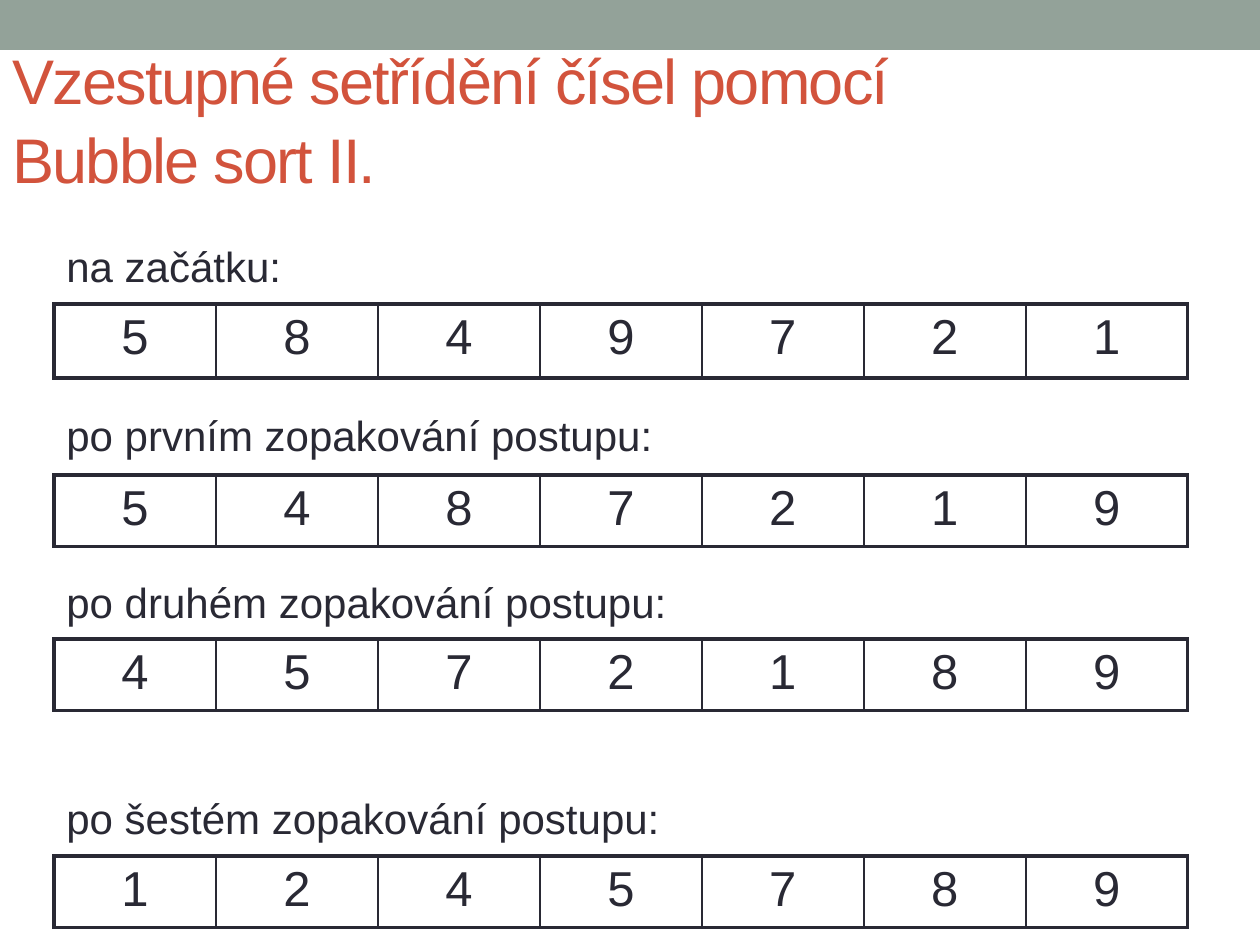
"""Build the slide that shows the passes of an ascending bubble sort."""
from lxml.etree import SubElement
from pptx import Presentation
from pptx.dml.color import RGBColor
from pptx.enum.shapes import MSO_SHAPE
from pptx.enum.text import MSO_ANCHOR, MSO_AUTO_SIZE, PP_ALIGN
from pptx.oxml.ns import qn
from pptx.util import Pt

SCALE = 914400 / 126
HUES = {"band": "93A299", "title": "D2533C", "ink": "292934"}
LEFT, STEP = 54, 162


def px(*sizes):
    return [round(size * SCALE) for size in sizes]


def write(para, text, size, hue):
    run = para.add_run()
    run.text = text
    run.font.name = "Arial"
    run.font.size = Pt(size)
    run.font.color.rgb = RGBColor.from_string(HUES[hue])
    return run


deck = Presentation()
deck.slide_width, deck.slide_height = px(1260, 945)
slide = deck.slides.add_slide(deck.slide_layouts[6])
shapes = slide.shapes

band = shapes.add_shape(MSO_SHAPE.RECTANGLE, *px(0, 0, 1260, 50))
band.shadow.inherit = False
band.fill.solid()
band.fill.fore_color.rgb = RGBColor.from_string(HUES["band"])
band.line.fill.background()

title = shapes.add_textbox(*px(0, 38, 1211, 158)).text_frame
title.word_wrap = True
title.vertical_anchor = MSO_ANCHOR.MIDDLE
para = title.paragraphs[0]
para.line_spacing = 1.05
for part, text in enumerate(["Vzestupné setřídění čísel pomocí", "Bubble sort II."]):
    if part:
        para.add_line_break()
    run = write(para, text, 36, "title")
    run.font._element.set("spc", "-100")

stages = [
    ("na začátku:", 234, 318, 304, 74, "5849721"),
    ("po prvním zopakování postupu:", 403, 615, 475, 70, "5487219"),
    ("po druhém zopakování postupu:", 570, 635, 639, 70, "4572189"),
    ("po šestém zopakování postupu:", 786, 635, 856, 70, "1245789"),
]
for label, top, width, row, high, digits in stages:
    frame = shapes.add_textbox(*px(LEFT, top, width, 63)).text_frame
    frame.word_wrap = True
    frame.auto_size = MSO_AUTO_SIZE.SHAPE_TO_FIT_TEXT
    write(frame.paragraphs[0], label, 24, "ink")

    count = len(digits)
    table = shapes.add_table(1, count, *px(LEFT, row, STEP * count, high)).table
    table.first_row = table.horz_banding = False
    for col, digit in enumerate(digits):
        table.columns[col].width = px(STEP)[0]
        cell = table.cell(0, col)
        para = cell.text_frame.paragraphs[0]
        para.alignment = PP_ALIGN.CENTER
        para.space_before = Pt(5.6)
        write(para, digit, 28, "ink")
        props = cell._tc.get_or_add_tcPr()
        thick = {"L": col == 0, "R": col == count - 1, "T": True, "B": True}
        for side, outer in thick.items():
            line = SubElement(props, qn(f"a:ln{side}"), w=str(Pt(2.25 if outer else 1)))
            fill = SubElement(line, qn("a:solidFill"))
            SubElement(fill, qn("a:srgbClr"), val=HUES["ink"])
        cell.fill.background()

deck.save("out.pptx")
